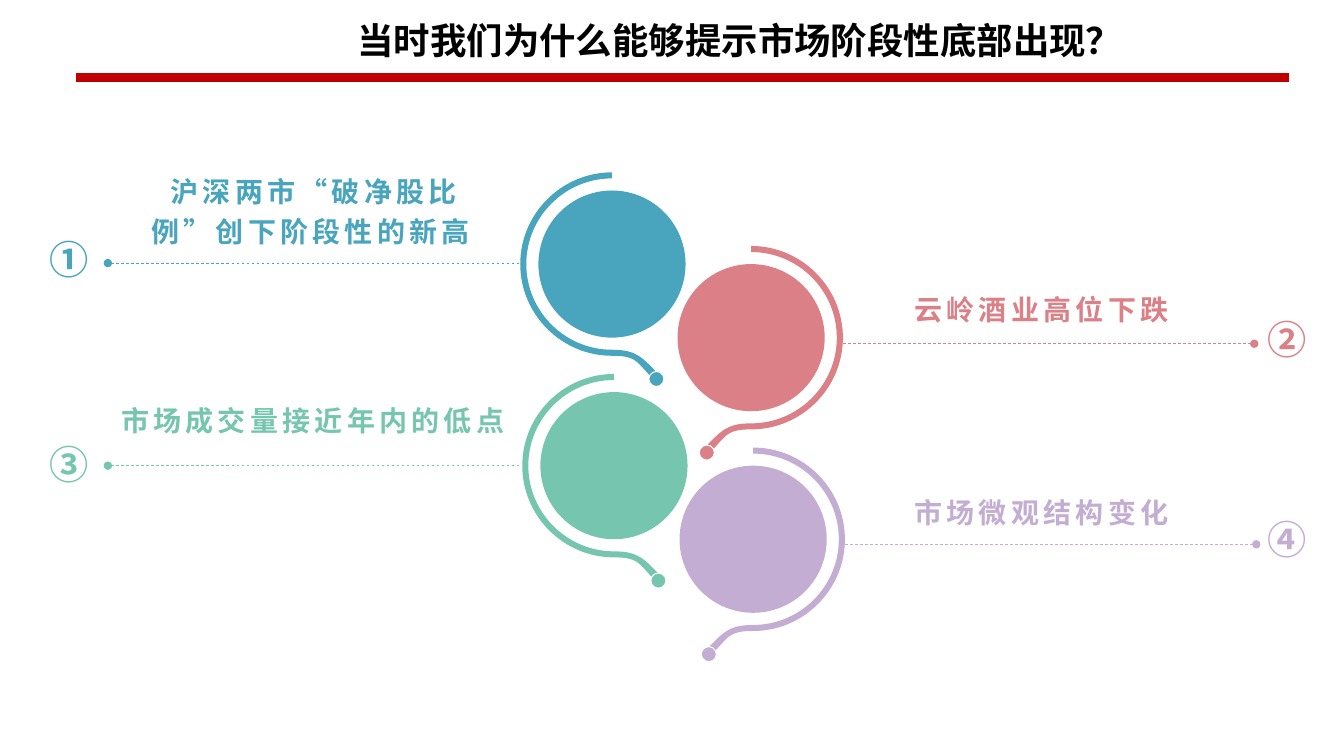
from dataclasses import dataclass

from lxml.etree import SubElement
from pptx import Presentation
from pptx.dml.color import RGBColor
from pptx.enum.dml import MSO_LINE as Dash
from pptx.enum.shapes import MSO_CONNECTOR as Link, MSO_SHAPE as Kind
from pptx.enum.text import MSO_ANCHOR as Anchor, PP_ALIGN as Align
from pptx.oxml.ns import qn
from pptx.util import Inches, Pt

FONT = "Noto Sans CJK SC"
DISC, DOT = 1.46, 0.15
INNER, OUTER = 0.85, 0.91
BEND = 0.55  # control length of a quarter circle, as a share of its radius
LEADER = 4.09

Box = tuple[float, float, float, float]
Point = tuple[float, float]


@dataclass
class Item:
    mark: str
    text: str
    color: str
    hub: Point
    side: int  # 1: opens to the left, -1: mirrored
    start: Point
    label: Box
    badge: Point


ITEMS = [
    Item("①", " 沪深两市“破净股比例”创下阶段性的新高", "48A5BD", (6.07, 2.62), 1,
         (1.07, 2.61), (1.07, 1.55, 4.02, 1.03), (0.39, 2.29)),
    Item("③", " 市场成交量接近年内的低点", "76C6AF", (6.09, 4.62), 1,
         (1.07, 4.62), (0.93, 3.68, 4.24, 0.92), (0.39, 4.32)),
    Item("②", "云岭酒业高位下跌", "DB8087", (7.45, 3.35), -1,
         (12.44, 3.41), (8.6, 2.72, 3.46, 0.64), (12.47, 3.08)),
    Item("④", "市场微观结构变化", "C4ADD2", (7.47, 5.35), -1,
         (12.46, 5.4), (8.6, 4.73, 3.46, 0.64), (12.47, 5.06)),
]


def rgb(code: str) -> RGBColor:
    return RGBColor.from_string(code)


def apply(target, values: dict) -> None:
    for key, value in values.items():
        setattr(target, key, value)


def write(shape, text: str, size: float, color: str, frame: dict,
          form: dict, gap: int = 0) -> None:
    """Fill a shape with one bold paragraph; gap is letter spacing in points."""
    apply(shape.text_frame, {"word_wrap": True, **frame})
    para = shape.text_frame.paragraphs[0]
    apply(para, form)
    run = para.add_run()
    run.text = text
    apply(run.font, {"size": Pt(size), "bold": True, "name": FONT})
    run.font.color.rgb = rgb(color)
    props = run.font._element
    SubElement(props, qn("a:ea"), typeface=FONT)
    if gap:
        props.set("spc", str(gap * 100))


def add_text(slide, box: Box, *args, **extra) -> None:
    write(slide.shapes.add_textbox(*map(Inches, box)), *args, **extra)


def add_line(slide, start: Point, end: Point, color: str, width: float):
    line = slide.shapes.add_connector(Link.STRAIGHT, *map(Inches, start + end))
    line.line.color.rgb = rgb(color)
    line.line.width = Pt(width)
    SubElement(line._element.spPr, qn("a:effectLst"))
    return line


def paint(shape, color: str, edge: str = "") -> None:
    shape.shadow.inherit = False
    shape.fill.solid()
    shape.fill.fore_color.rgb = rgb(color)
    if edge:
        shape.line.color.rgb = rgb(edge)
        shape.line.width = Pt(0.75)
    else:
        shape.line.fill.background()


def add_disc(slide, hub: Point, size: float, color: str, edge: str = "") -> None:
    box = hub[0] - size / 2, hub[1] - size / 2, size, size
    paint(slide.shapes.add_shape(Kind.OVAL, *map(Inches, box)), color, edge)


def arc(r: float, way: int) -> list[list[Point]]:
    """Two curves along the left half circle; way 1 runs down, -1 up."""
    k = r * BEND
    return [[(-k, -way * r), (-r, -way * k), (-r, 0)],
            [(-r, way * k), (-k, way * r), (0, way * r)]]


# One point is a straight step; three points are a Bezier curve.
HOOK = [
    [(0, -OUTER)],
    [(0, -INNER)],
    *arc(INNER, 1),
    [(0.25, INNER), (0.3, 0.93), (0.47, 1.1)],
    [(0.37, 1.1)],
    [(0.24, 0.96), (0.23, OUTER), (0, OUTER)],
    *arc(OUTER, -1),
]


def add_hook(slide, item: Item) -> None:
    x, y = item.hub
    spots = [(Inches(x + item.side * dx), Inches(y + dy))
             for step in HOOK for dx, dy in step]
    pen = slide.shapes.build_freeform(*spots[0])
    pen.add_line_segments(spots[1:], close=True)
    shape = pen.convert_to_shape()
    lines = iter(list(shape._element.iter(qn("a:lnTo"))))
    for step in HOOK[1:]:
        first = next(lines)
        if len(step) == 3:
            first.tag = qn("a:cubicBezTo")
            for _ in step[1:]:
                extra = next(lines)
                first.append(extra[0])
                extra.getparent().remove(extra)
    paint(shape, item.color)


def add_item(slide, item: Item) -> None:
    x, y = item.start
    line = add_line(slide, item.start, (x + item.side * LEADER, y), item.color, 0.5)
    line.line.dash_style = Dash.DASH
    SubElement(line.line._ln, qn("a:headEnd"), type="oval")

    add_disc(slide, item.hub, DISC, item.color)
    add_hook(slide, item)
    tip = item.hub[0] + item.side * 0.44, item.hub[1] + 1.14
    add_disc(slide, tip, DOT, item.color, "FEFFFF")

    add_text(slide, item.label, item.text, 20, item.color,
             {"vertical_anchor": Anchor.MIDDLE},
             {"alignment": Align.CENTER, "line_spacing": 1.2}, gap=3)
    add_text(slide, item.badge + (0.62, 0.6), item.mark, 28, item.color, {}, {})


def main() -> None:
    deck = Presentation()
    apply(deck, {"slide_width": Inches(13.33), "slide_height": Inches(7.5)})
    slide = deck.slides.add_slide(deck.slide_layouts[5])

    add_line(slide, (0.75, 0.77), (12.78, 0.77), "C00000", 6)
    title = slide.shapes.title
    apply(title, {"left": Inches(2.79), "top": Inches(0.13),
                  "width": Inches(8.45), "height": Inches(0.54)})
    write(title, "当时我们为什么能够提示市场阶段性底部出现？", 26, "000000",
          {"vertical_anchor": Anchor.TOP}, {"alignment": Align.RIGHT})

    for item in ITEMS:
        add_item(slide, item)
    deck.save("out.pptx")


if __name__ == "__main__":
    main()
